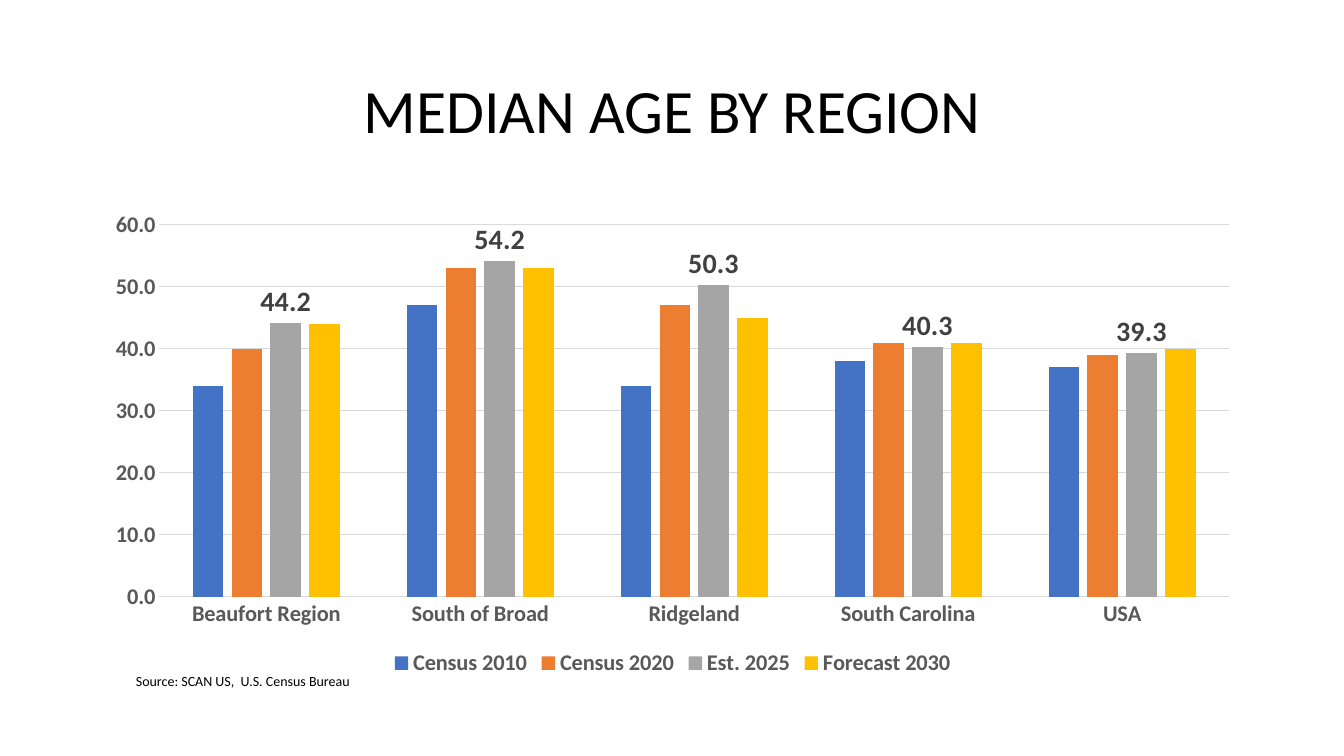
from typing import NamedTuple

from pptx import Presentation
from pptx.chart.data import CategoryChartData
from pptx.dml.color import RGBColor
from pptx.enum.chart import XL_CHART_TYPE, XL_LABEL_POSITION, XL_LEGEND_POSITION, XL_TICK_MARK
from pptx.enum.text import MSO_ANCHOR, MSO_AUTO_SIZE, PP_ALIGN
from pptx.util import Inches, Pt

FONT = "Calibri"
COLORS = {
    "text": "000000", "axis": "595959", "label": "404040", "grid": "D9D9D9",
    "blue": "4472C4", "orange": "ED7D31", "gray": "A5A5A5", "gold": "FFC000",
}


class AgeSeries(NamedTuple):
    name: str
    values: tuple[float, ...]
    color: str
    labeled: bool = False


REGIONS = ("Beaufort Region", "South of Broad", "Ridgeland", "South Carolina", "USA")
SERIES = (
    AgeSeries("Census 2010", (34, 47, 34, 38, 37), "blue"),
    AgeSeries("Census 2020", (40, 53, 47, 41, 39), "orange"),
    AgeSeries("Est. 2025", (44.2, 54.2, 50.3, 40.3, 39.3), "gray", True),
    AgeSeries("Forecast 2030", (44, 53, 45, 41, 40), "gold"),
)


def rgb(name: str) -> RGBColor:
    return RGBColor.from_string(COLORS[name])


def style_font(font, size: float, color: str, bold: bool = False) -> None:
    font.name = FONT
    font.size = Pt(size)
    font.bold = bold
    font.color.rgb = rgb(color)


def style_line(line, color: str) -> None:
    line.color.rgb = rgb(color)
    line.width = Pt(0.75)


def add_text(s, box: tuple[float, ...], text: str, size: float):
    """Add a one-run text box and return its text frame."""
    tf = s.shapes.add_textbox(*map(Inches, box)).text_frame
    tf.word_wrap = True
    r = tf.paragraphs[0].add_run()
    r.text = text
    style_font(r.font, size, "text")
    return tf


def add_age_chart(s) -> None:
    data = CategoryChartData(number_format="0.0")
    data.categories = REGIONS
    for item in SERIES:
        data.add_series(item.name, item.values)
    box = map(Inches, (0.92, 2, 11.5, 4.76))
    chart = s.shapes.add_chart(XL_CHART_TYPE.COLUMN_CLUSTERED, *box, data).chart
    style_font(chart.font, 10, "text")
    chart.has_title = False

    chart.has_legend = True
    chart.legend.position = XL_LEGEND_POSITION.BOTTOM
    chart.legend.include_in_layout = False
    style_font(chart.legend.font, 16, "axis", True)

    for axis in (chart.category_axis, chart.value_axis):
        axis.major_tick_mark = axis.minor_tick_mark = XL_TICK_MARK.NONE
        style_font(axis.tick_labels.font, 16, "axis", True)
    style_line(chart.category_axis.format.line, "grid")
    value_axis = chart.value_axis
    value_axis.minimum_scale, value_axis.maximum_scale, value_axis.major_unit = 0, 60, 10
    value_axis.format.line.fill.background()
    style_line(value_axis.major_gridlines.format.line, "grid")

    plot = chart.plots[0]
    plot.gap_width, plot.overlap, plot.vary_by_categories = 219, -27, False
    for series, item in zip(plot.series, SERIES):
        series.format.fill.solid()
        series.format.fill.fore_color.rgb = rgb(item.color)
        if item.labeled:
            labels = series.data_labels
            labels.show_value = True
            labels.position = XL_LABEL_POSITION.OUTSIDE_END
            style_font(labels.font, 20, "label", True)


def main() -> None:
    prs = Presentation()
    prs.slide_width, prs.slide_height = Inches(13.33), Inches(7.5)
    s = prs.slides.add_slide(prs.slide_layouts[6])

    title = add_text(s, (0.92, 0.4, 11.5, 1.45), "MEDIAN AGE BY REGION", 44)
    title.vertical_anchor = MSO_ANCHOR.MIDDLE
    title.paragraphs[0].alignment = PP_ALIGN.CENTER
    title.paragraphs[0].line_spacing = 0.9

    add_age_chart(s)
    source = add_text(s, (1.25, 6.62, 2.73, 0.27), "Source: SCAN US,  U.S. Census Bureau", 10)
    source.auto_size = MSO_AUTO_SIZE.SHAPE_TO_FIT_TEXT
    prs.save("out.pptx")


if __name__ == "__main__":
    main()
